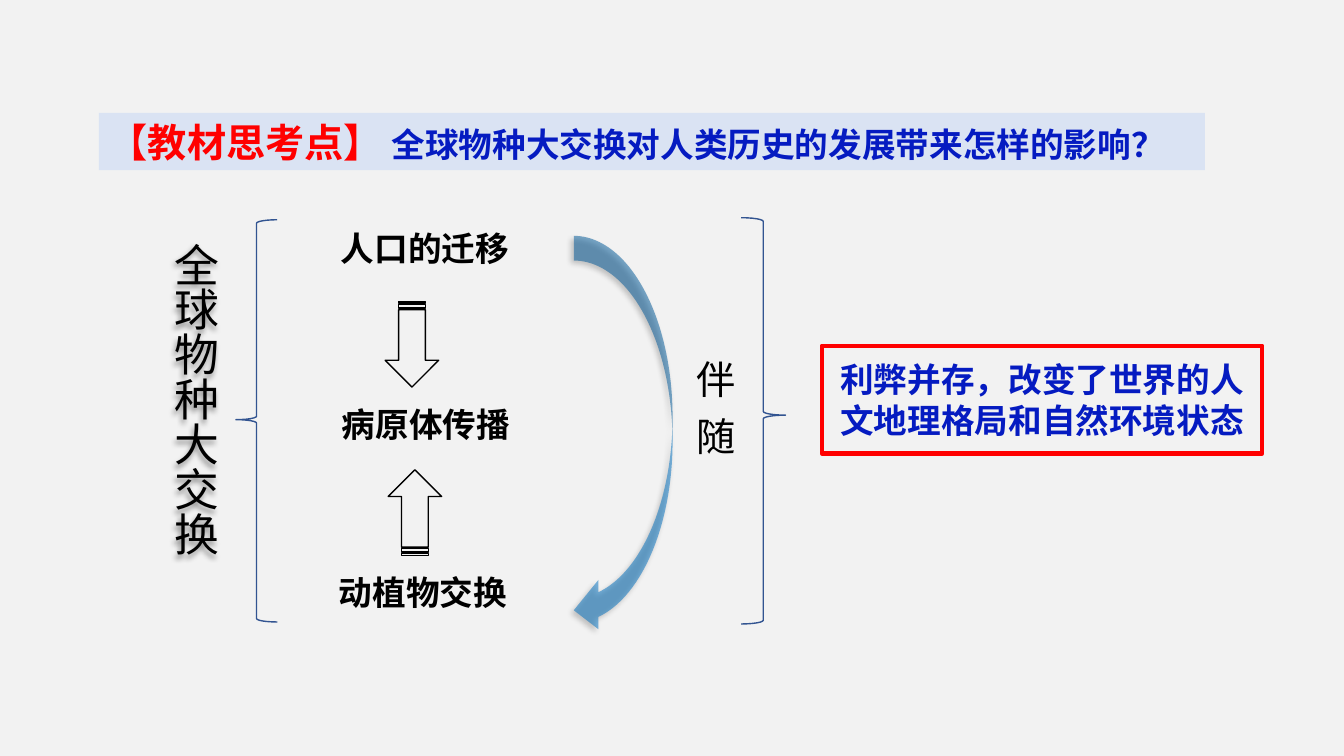
from lxml.etree import SubElement
from pptx import Presentation
from pptx.dml.color import RGBColor
from pptx.enum.shapes import MSO_SHAPE as Preset
from pptx.enum.text import MSO_ANCHOR as Anchor, PP_ALIGN as Align
from pptx.oxml.ns import qn
from pptx.util import Inches, Pt

COLORS = {
    "background": "F2F2F2",
    "band": "DAE3F3",
    "red": "FF0000",
    "blue": "051BC1",
    "brace": "325491",
    "arrow": "0070C0",
    "black": "000000",
}
FONT = "Noto Sans CJK SC"


class SlideBuilder:
    """Places elements by (left, top, width, height) in percent of the slide."""

    def __init__(self, presentation):
        self.size = (presentation.slide_width, presentation.slide_height)
        self.slide = presentation.slides.add_slide(presentation.slide_layouts[6])
        background = self.slide.background.fill
        background.solid()
        background.fore_color.rgb = self.color("background")

    def color(self, name):
        return RGBColor.from_string(COLORS[name])

    def place(self, box):
        return [round(share / 100 * self.size[i % 2]) for i, share in enumerate(box)]

    def shape(self, preset, box, fill=None, line=None, line_width=1, rotation=0,
              adjustments=()):
        shape = self.slide.shapes.add_shape(preset, *self.place(box))
        shape.shadow.inherit = False
        shape.rotation = rotation
        for index, value in enumerate(adjustments):
            shape.adjustments[index] = value
        if fill:
            shape.fill.solid()
            shape.fill.fore_color.rgb = self.color(fill)
        else:
            shape.fill.background()
        if line:
            shape.line.color.rgb = self.color(line)
            shape.line.width = Pt(line_width)
        else:
            shape.line.fill.background()
        return shape

    def text_box(self, box, runs, **options):
        shape = self.slide.shapes.add_textbox(*self.place(box))
        self.add_text(shape, runs, **options)
        return shape

    def add_text(self, shape, runs, align=Align.LEFT, vertical=False, wrap=True,
                 bold=True, spacing=0):
        """Fill a shape with one paragraph of (text, size, color) runs."""
        frame = shape.text_frame
        frame.word_wrap = wrap
        frame.vertical_anchor = Anchor.MIDDLE
        if vertical:
            shape.element.txBody.bodyPr.set("vert", "eaVert")
        paragraph = frame.paragraphs[0]
        paragraph.alignment = align
        for text, size, color in runs:
            run = paragraph.add_run()
            run.text = text
            run.font.size = Pt(size)
            run.font.bold = bold
            run.font.name = FONT
            run.font.color.rgb = self.color(color)
            properties = run.font._element
            SubElement(properties, qn("a:ea"), typeface=FONT)
            if spacing:
                properties.set("spc", str(round(spacing * 100)))

    def soft_shadow(self, shape):
        shape.shadow.inherit = False
        effects = shape.element.spPr.find(qn("a:effectLst"))
        shadow = SubElement(effects, qn("a:outerShdw"), blurRad=str(Pt(4)),
                            dist=str(Pt(3)), dir=str(135 * 60000), rotWithShape="0")
        tint = SubElement(shadow, qn("a:srgbClr"), val=COLORS["black"])
        SubElement(tint, qn("a:alpha"), val="40000")

    def translucent(self, shape, percent):
        tint = shape.element.spPr.find(qn("a:solidFill"))[0]
        SubElement(tint, qn("a:alpha"), val=str(percent * 1000))


def main():
    presentation = Presentation()
    presentation.slide_width = Inches(13.33)
    presentation.slide_height = Inches(7.5)
    builder = SlideBuilder(presentation)

    conclusion = builder.shape(Preset.RECTANGLE, (61.14, 45.73, 32.78, 14.27),
                               line="red", line_width=3)
    builder.add_text(conclusion,
                     [("利弊并存，改变了世界的人文地理格局和自然环境状态", 24, "blue")],
                     align=Align.CENTER)

    topic = builder.text_box((11.78, 30.8, 5.55, 49.73),
                             [("全球物种大交换", 32, "black")],
                             vertical=True, bold=False)
    builder.soft_shadow(topic)

    for box, rotation, point in (((17.55, 29.07, 3.08, 53.2), 0, 0.497),
                                 ((55.14, 28.8, 3.3, 53.73), 180, 0.514)):
        builder.shape(Preset.LEFT_BRACE, box, line="brace", rotation=rotation,
                      adjustments=(0.083, point))

    for left, top, width, label in ((21.98, 29.47, 19.28, "人口的迁移"),
                                    (22.2, 52.8, 18.98, "病原体传播"),
                                    (21.98, 74.93, 18.98, "动植物交换")):
        builder.text_box((left, top, width, 6.67), [(label, 24, "black")],
                         align=Align.CENTER)

    for left, top, rotation in ((27.46, 42, 90), (27.68, 64.27, 270)):
        builder.shape(Preset.STRIPED_RIGHT_ARROW, (left, top, 6.38, 7.07),
                      line="black", rotation=rotation)

    sweep = builder.shape(Preset.CURVED_LEFT_ARROW, (42.69, 31.2, 7.35, 52.8),
                          fill="arrow")
    builder.translucent(sweep, 51)
    builder.soft_shadow(sweep)
    builder.text_box((50.64, 46.27, 5.03, 17.07), [("伴 随", 28, "black")],
                     vertical=True, wrap=False, bold=False, spacing=3.2)

    question = builder.shape(Preset.RECTANGLE, (7.35, 14.93, 82.3, 7.6), fill="band")
    builder.add_text(question, [
        ("【教材思考点】 ", 28, "red"),
        ("全球物种大交换对人类历史的发展带来怎样的影响？", 24, "blue"),
    ])

    presentation.save("out.pptx")


if __name__ == "__main__":
    main()
